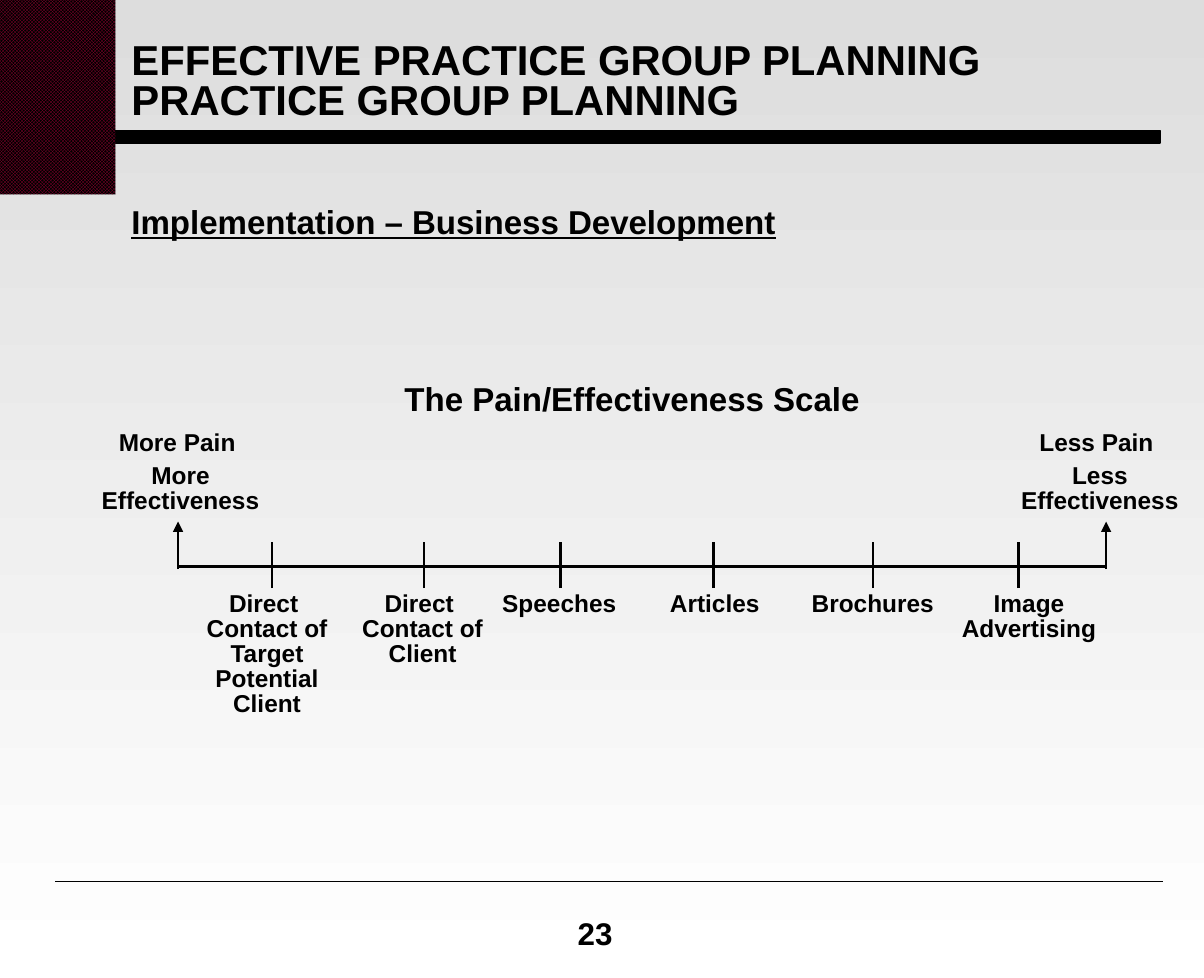
from lxml.etree import SubElement
from pptx import Presentation
from pptx.dml.color import RGBColor
from pptx.enum.dml import MSO_PATTERN
from pptx.enum.shapes import MSO_CONNECTOR, MSO_SHAPE
from pptx.enum.text import MSO_ANCHOR, PP_ALIGN
from pptx.oxml.ns import qn
from pptx.util import Inches, Pt

BLACK = "000000"
AXIS = 4.52
# tick x, label left, label width, label text
STEPS = [
    (2.17, 1.5, 1.26, "Direct \nContact of Target Potential Client"),
    (3.38, 2.74, 1.26, "Direct \nContact of Client"),
    (4.47, 3.83, 1.26, "Speeches"),
    (5.69, 5.07, 1.26, "Articles"),
    (6.96, 6.33, 1.26, "Brochures"),
    (8.12, 7.49, 1.43, "Image Advertising"),
]
# arrow x, caption left, caption width, caption text
ENDS = [
    (1.42, 0.59, 1.7, "More Pain \nMore Effectiveness"),
    (8.82, 8.04, 1.46, "Less Pain \nLess Effectiveness"),
]


def color(code):
    return RGBColor.from_string(code)


def add_rect(slide, left, top, width, height):
    rect = slide.shapes.add_shape(
        MSO_SHAPE.RECTANGLE, Inches(left), Inches(top), Inches(width), Inches(height))
    rect.shadow.inherit = False
    return rect


def add_line(slide, start, end, width=1.5, arrow=False):
    line = slide.shapes.add_connector(
        MSO_CONNECTOR.STRAIGHT, *(Inches(v) for v in (*start, *end)))
    line.line.color.rgb = color(BLACK)
    line.line.width = Pt(width)
    if arrow:
        SubElement(line.line._get_or_add_ln(), qn("a:tailEnd"), type="triangle")
    SubElement(line._element.spPr, qn("a:effectLst"))


def add_text(slide, left, top, width, height, text, size=14,
             align=PP_ALIGN.CENTER, spacing=0.85, gap=0, underline=False):
    box = slide.shapes.add_textbox(
        Inches(left), Inches(top), Inches(width), Inches(height))
    frame = box.text_frame
    frame.word_wrap = True
    frame.text = text
    for i, para in enumerate(frame.paragraphs):
        para.alignment = align
        para.line_spacing = spacing
        if i and gap:
            para.space_before = Pt(gap)
        for run in para.runs:
            font = run.font
            font.name, font.size, font.bold = "Arial", Pt(size), True
            font.color.rgb = color(BLACK)
            if underline:
                font.underline = True
    return frame


def add_frame(slide):
    # Background gradient
    fill = slide.background.fill
    fill.gradient()
    fill.gradient_angle = 270
    for stop, code in zip(fill.gradient_stops, ("DDDDDD", "FFFFFF")):
        stop.color.rgb = color(code)

    # Title bar and corner block
    bar = add_rect(slide, 0, 1.04, 9.25, 0.1)
    bar.fill.solid()
    bar.fill.fore_color.rgb = color(BLACK)
    bar.line.color.rgb = color(BLACK)
    bar.line.width = Pt(0.75)
    block = add_rect(slide, 0, 0, 0.92, 1.55)
    block.fill.patterned()
    block.fill.pattern = MSO_PATTERN.SMALL_CHECKER_BOARD
    block.fill.fore_color.rgb = color("990033")
    block.fill.back_color.rgb = color(BLACK)
    block.line.fill.background()

    # Footer
    add_line(slide, (0.44, 7.03), (9.27, 7.03), width=0.75)
    add_text(slide, 4.33, 7.24, 0.83, 0.4, "23", size=18, spacing=1)


def add_scale(slide):
    add_text(slide, 2.08, 2.97, 5.92, 0.42, "The Pain/Effectiveness Scale",
             size=19, spacing=1)

    # Axis with an arrow and a caption at each end
    add_line(slide, (ENDS[0][0], AXIS), (ENDS[1][0], AXIS))
    for x, left, width, text in ENDS:
        add_line(slide, (x, AXIS + 0.02), (x, 4.16), arrow=True)
        add_text(slide, left, 3.39, width, 0.78, text, gap=5)

    # Ticks and labels
    for x, left, width, text in STEPS:
        add_line(slide, (x, 4.69), (x, 4.32))
        add_text(slide, left, 4.68, width, 0.5, text)


def main():
    deck = Presentation()
    deck.slide_width, deck.slide_height = Inches(9.6), Inches(7.8)
    slide = deck.slides.add_slide(deck.slide_layouts[6])
    add_frame(slide)

    # Title and heading
    title = add_text(slide, 0.95, 0.3, 8.18, 0.73,
                     "EFFECTIVE PRACTICE GROUP PLANNING\vPRACTICE GROUP PLANNING",
                     size=24, align=PP_ALIGN.LEFT, spacing=0.8)
    title.vertical_anchor = MSO_ANCHOR.MIDDLE
    add_text(slide, 0.95, 1.62, 8.22, 0.4, "Implementation – Business Development",
             size=19, align=PP_ALIGN.LEFT, spacing=0.8, underline=True)

    add_scale(slide)
    deck.save("out.pptx")


if __name__ == "__main__":
    main()
